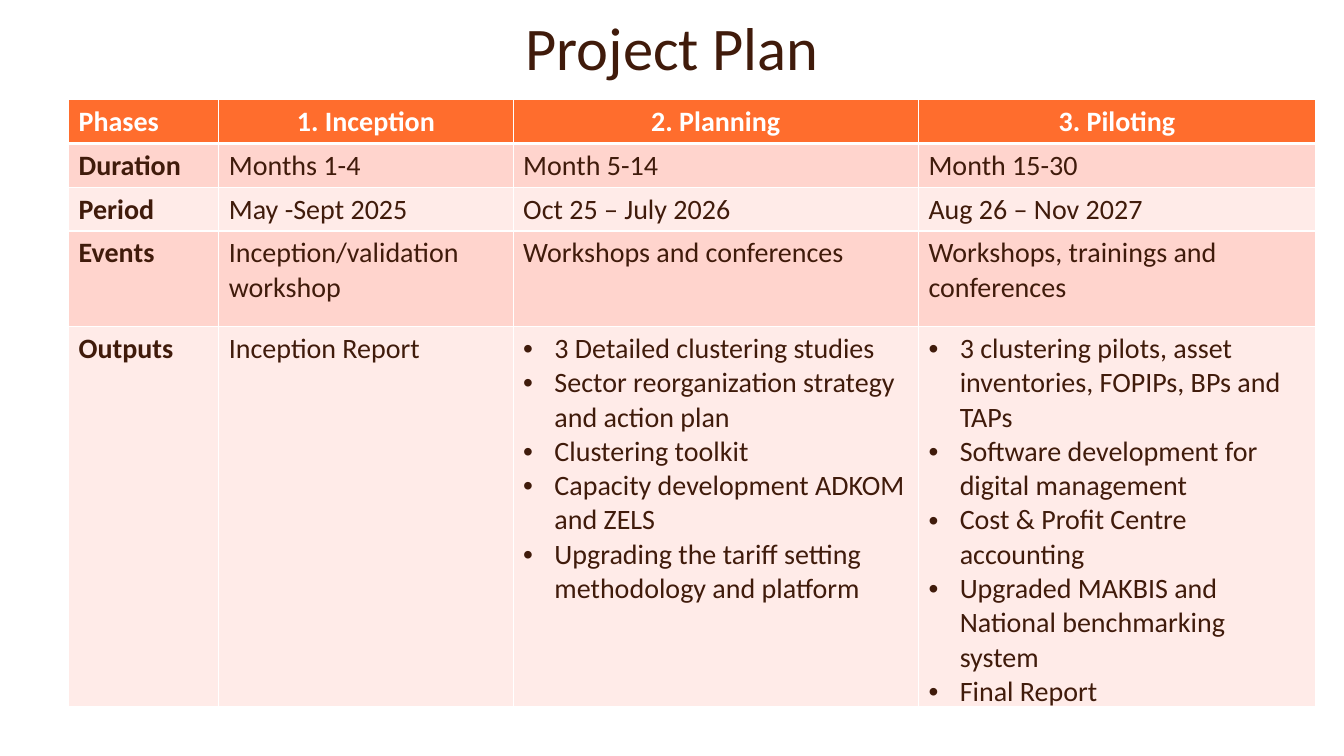
from lxml import etree
from pptx import Presentation
from pptx.dml.color import RGBColor
from pptx.enum.text import MSO_ANCHOR, PP_ALIGN
from pptx.oxml.ns import qn
from pptx.util import Inches, Pt

CENTER = PP_ALIGN.CENTER
LEFT = PP_ALIGN.LEFT
MIDDLE = MSO_ANCHOR.MIDDLE

WIDE, HIGH = Inches(13.33), Inches(7.5)
INK = {"dark": "401B0B", "white": "FFFFFF", "head": "FF6D2D",
       "odd": "FFD4CD", "even": "FFEBE8"}
COLS = [1.49, 2.92, 4.02, 3.94]
ROWS = [0.43, 0.43, 0.43, 0.95, 3.77]
INDENT = Inches(0.31)

PLAN = [
    ["Phases", "1. Inception", "2. Planning", "3. Piloting"],
    ["Duration", "Months 1-4", "Month 5-14", "Month 15-30"],
    ["Period", "May -Sept 2025", "Oct 25 – July 2026", "Aug 26 – Nov 2027"],
    ["Events", "Inception/validation workshop", "Workshops and conferences",
     "Workshops, trainings and conferences"],
    ["Outputs", "Inception Report",
     ["3 Detailed clustering studies",
      "Sector reorganization strategy and action plan",
      "Clustering toolkit",
      "Capacity development ADKOM and ZELS",
      "Upgrading the tariff setting methodology and platform"],
     ["3 clustering pilots, asset inventories, FOPIPs, BPs and TAPs",
      "Software development for digital management",
      "Cost & Profit Centre accounting",
      "Upgraded MAKBIS and National benchmarking system",
      "Final Report"]],
]


def color(name):
    return RGBColor.from_string(INK[name])


def style(para, ink, **form):
    for key, value in {"name": "Calibri", **form}.items():
        setattr(para.font, key, value)
    para.font.color.rgb = color(ink)


def bullet(para):
    props = para._p.get_or_add_pPr()
    props.set("marL", str(INDENT))
    props.set("indent", str(-INDENT))
    etree.SubElement(props, qn("a:buFont"), typeface="Arial")
    etree.SubElement(props, qn("a:buChar"), char="•")


def border(cell, row):
    """Rule all four sides, with a thick line under the header row."""
    props = cell._tc.get_or_add_tcPr()
    thick = {"T": row == 1, "B": row == 0}
    for side in "LRTB":
        width = Pt(3 if thick.get(side) else 1)
        line = etree.SubElement(props, qn(f"a:ln{side}"), w=str(width))
        fill = etree.SubElement(line, qn("a:solidFill"))
        etree.SubElement(fill, qn("a:srgbClr"), val=INK["white"])


def fill_cell(cell, text, row, col):
    border(cell, row)
    cell.fill.solid()
    cell.fill.fore_color.rgb = color(
        "head" if row == 0 else "odd" if row % 2 else "even")
    listed = isinstance(text, list)
    lines = text if listed else [text]
    frame = cell.text_frame
    for num, line in enumerate(lines):
        para = frame.add_paragraph() if num else frame.paragraphs[0]
        para.text = line
        para.alignment = CENTER if row == 0 and col else LEFT
        if listed:
            bullet(para)
        style(para, "dark" if row else "white", size=Pt(20),
              bold=row == 0 or col == 0)


def add_title(slide, text):
    box = slide.shapes.add_textbox(
        int(WIDE * 0.075), int(HIGH * 0.02), int(WIDE * 0.85), int(HIGH * 0.095))
    frame = box.text_frame
    frame.word_wrap = True
    frame.vertical_anchor = MIDDLE
    para = frame.paragraphs[0]
    para.text = text
    para.alignment = CENTER
    para.line_spacing = 0.9
    style(para, "dark", size=Pt(43.2))


def add_plan(slide):
    table = slide.shapes.add_table(
        len(ROWS), len(COLS), Inches(0.68), Inches(0.99),
        Inches(sum(COLS)), Inches(sum(ROWS))).table
    for col, width in zip(table.columns, COLS):
        col.width = Inches(width)
    for row, height in zip(table.rows, ROWS):
        row.height = Inches(height)
    for row, texts in enumerate(PLAN):
        for col, text in enumerate(texts):
            fill_cell(table.cell(row, col), text, row, col)


def main():
    deck = Presentation()
    deck.slide_width, deck.slide_height = WIDE, HIGH
    slide = deck.slides.add_slide(deck.slide_layouts[6])
    add_title(slide, "Project Plan")
    add_plan(slide)
    deck.save("out.pptx")


if __name__ == "__main__":
    main()
